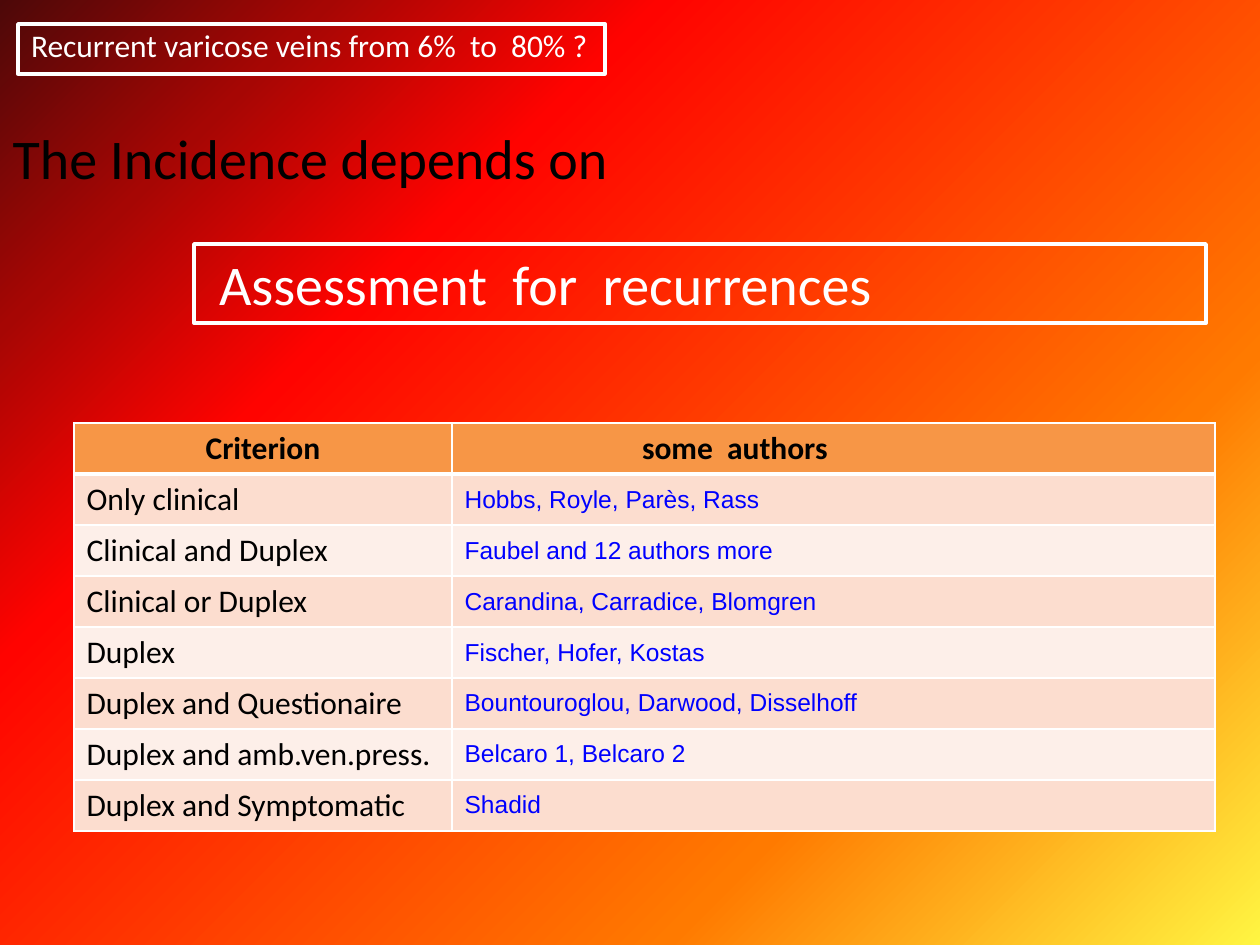
import pptx
import pptx.util
import pptx.dml.color
import pptx.enum.shapes
import pptx.enum.text
import pptx.oxml
import pptx.oxml.ns
import lxml.etree

RGB = pptx.dml.color.RGBColor
ALIGN = pptx.enum.text.PP_ALIGN
ANCHOR = pptx.enum.text.MSO_ANCHOR
RECT = pptx.enum.shapes.MSO_SHAPE.RECTANGLE

WHITE = RGB(0xFF, 0xFF, 0xFF)
BLACK = RGB(0, 0, 0)
BLUE = RGB(0, 0, 0xFF)
ORANGE = RGB(0xF7, 0x96, 0x46)
BANDS = (RGB(0xFC, 0xDD, 0xCF), RGB(0xFD, 0xEF, 0xE9))
FADE = (
    (0, RGB(0xFF, 0xF5, 0x42)),
    (27, RGB(0xFF, 0x7A, 0x00)),
    (70, RGB(0xFF, 0x03, 0x00)),
    (85, RGB(0xA6, 0x06, 0x04)),
    (100, RGB(0x4D, 0x08, 0x08)),
)

ROWS = (
    ("Criterion", "some  authors"),
    ("Only clinical", "Hobbs, Royle, Parès, Rass"),
    ("Clinical and Duplex", "Faubel and 12 authors more"),
    ("Clinical or Duplex", "Carandina, Carradice, Blomgren"),
    ("Duplex", "Fischer, Hofer, Kostas"),
    ("Duplex and Questionaire", "Bountouroglou, Darwood, Disselhoff"),
    ("Duplex and amb.ven.press.", "Belcaro 1, Belcaro 2"),
    ("Duplex and Symptomatic", "Shadid"),
)


def px(n):
    return pptx.util.Emu(round(n * 914400 / 126))


def write(frame, text, size, color, font="Calibri", bold=False, align=ALIGN.LEFT):
    para = frame.paragraphs[0]
    para.alignment = align
    run = para.add_run()
    run.text = text
    run.font.size = pptx.util.Pt(size)
    run.font.name = font
    run.font.bold = bold
    run.font.color.rgb = color


def paint(slide):
    """Diagonal fade, yellow at bottom right to dark red at top left."""
    fill = slide.background.fill
    fill.gradient()
    fill.gradient_angle = 135
    qn = pptx.oxml.ns.qn
    stops = slide.background._cSld.find(".//" + qn("a:gsLst"))
    for old in list(stops):
        stops.remove(old)
    for pos, color in FADE:
        stop = lxml.etree.SubElement(stops, qn("a:gs"), pos=str(pos * 1000))
        lxml.etree.SubElement(stop, qn("a:srgbClr"), val=str(color))


def head(slide, x, y, w, h):
    title = slide.shapes.title
    title.left, title.top, title.width, title.height = px(x), px(y), px(w), px(h)
    frame = title.text_frame
    frame.word_wrap = False
    frame.vertical_anchor = ANCHOR.TOP
    write(frame, "The Incidence depends on", 32, BLACK)


def banner(slide, x, y, w, h, text, size, line, rise, inset):
    """White outline with its caption, which starts a little above it."""
    group = slide.shapes.add_group_shape()
    box = group.shapes.add_shape(RECT, px(x), px(y), px(w), px(h))
    box.shadow.inherit = False
    box.fill.background()
    box.line.color.rgb = WHITE
    box.line.width = pptx.util.Pt(line)
    label = group.shapes.add_textbox(px(x), px(y - rise), px(w), px(h))
    frame = label.text_frame
    frame.word_wrap = True
    frame.margin_left = px(inset)
    frame.margin_right = 0
    write(frame, text, size, WHITE)


def edge(cell, side, width):
    space = pptx.oxml.ns.nsdecls("a")
    cell._tc.get_or_add_tcPr().append(pptx.oxml.parse_xml(
        f'<a:ln{side} {space} w="{width * 12700}"><a:solidFill>'
        f'<a:srgbClr val="{WHITE}"/></a:solidFill></a:ln{side}>'))


def grid(slide, x, y, widths, step):
    table = slide.shapes.add_table(
        len(ROWS), len(widths), px(x), px(y),
        px(sum(widths)), px(step * len(ROWS))).table
    for col, width in zip(table.columns, widths):
        col.width = px(width)
    for r, row in enumerate(ROWS):
        table.rows[r].height = px(step)
        for c, text in enumerate(row):
            cell = table.cell(r, c)
            cell.vertical_anchor = ANCHOR.MIDDLE
            # The rule under the header row is thicker
            for side in "LRTB":
                thick = (r, side) in ((0, "B"), (1, "T"))
                edge(cell, side, 3 if thick else 1)
            cell.fill.solid()
            cell.fill.fore_color.rgb = BANDS[(r - 1) % 2] if r else ORANGE
            frame = cell.text_frame
            if r == 0:
                align = ALIGN.LEFT if c else ALIGN.CENTER
                write(frame, text, 18, BLACK, bold=True, align=align)
            elif c == 0:
                write(frame, text, 18, BLACK)
            else:
                write(frame, text, 14, BLUE, font="Arial")
    table.cell(0, 1).margin_left = px(190)


def main():
    deck = pptx.Presentation()
    deck.slide_width, deck.slide_height = px(1260), px(945)
    slide = deck.slides.add_slide(deck.slide_layouts[5])
    paint(slide)
    banner(slide, 18, 24, 587, 50,
           "Recurrent varicose veins from 6%  to  80% ?", 18, 2, 4, 13)
    head(slide, 0, 117, 842, 81)
    grid(slide, 74, 423, (378, 763), 51)
    banner(slide, 194, 244, 1012, 79,
           "Assessment  for  recurrences", 32, 2.25, 1, 25)
    deck.save("out.pptx")


if __name__ == "__main__":
    main()
